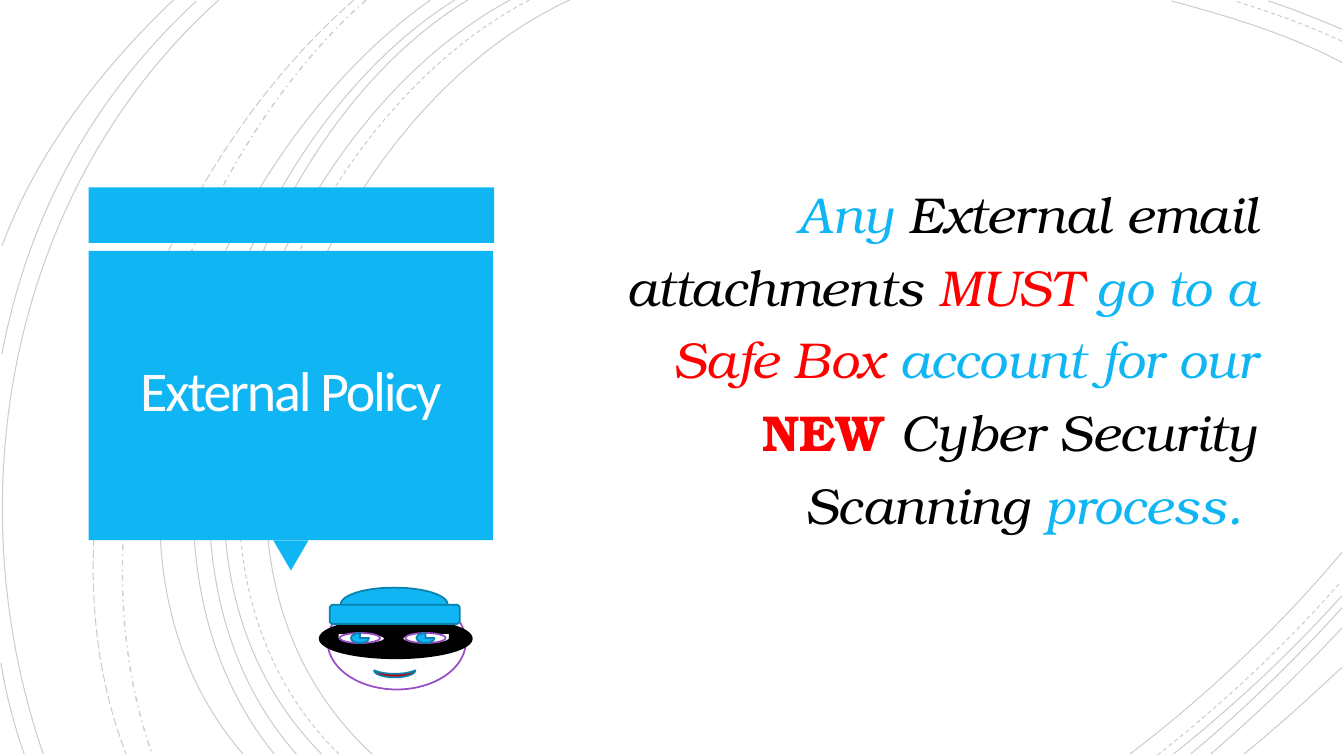
from lxml.etree import SubElement
from pptx import Presentation
from pptx.dml.color import RGBColor
from pptx.enum.dml import MSO_LINE
from pptx.enum.shapes import MSO_SHAPE
from pptx.enum.text import MSO_ANCHOR, MSO_AUTO_SIZE, PP_ALIGN
from pptx.oxml.ns import qn
from pptx.util import Pt

PX = 9144  # one px is a hundredth of an inch

BLUE = RGBColor(0x10, 0xB6, 0xF4)
DARK_BLUE = RGBColor(0x0B, 0x81, 0xAD)
PURPLE = RGBColor(0x98, 0x4E, 0xC7)
RED = RGBColor(0xFF, 0x00, 0x00)
DARK_RED = RGBColor(0xC0, 0x00, 0x00)
BLACK = RGBColor(0x00, 0x00, 0x00)
WHITE = RGBColor(0xFF, 0xFF, 0xFF)
TITLE_WHITE = RGBColor(0xFF, 0xFE, 0xFF)

SOLID, DASH = MSO_LINE.SOLID, MSO_LINE.DASH

# Each arc: start, two control points, end, dash style
ARCS = [
    ((565, 0), (315, 115), (143, 540), (369, 748), SOLID),
    ((1331, 62), (1278, 34), (1218, 16), (1162, 1), SOLID),
    ((1121, 748), (1197, 690), (1269, 622), (1331, 548), SOLID),
    ((525, 0), (285, 125), (123, 537), (336, 748), DASH),
    ((1331, 41), (1297, 25), (1260, 12), (1225, 1), DASH),
    ((1148, 749), (1213, 698), (1275, 640), (1330, 577), DASH),
    ((506, 0), (270, 127), (110, 537), (319, 748), SOLID),
    ((1331, 29), (1307, 19), (1283, 9), (1258, 1), SOLID),
    ((1164, 748), (1223, 701), (1280, 648), (1331, 591), SOLID),
    ((464, 0), (244, 133), (110, 541), (294, 748), SOLID),
    ((1181, 748), (1234, 704), (1284, 655), (1331, 603), SOLID),
    ((451, 0), (231, 138), (97, 533), (272, 748), SOLID),
    ((1201, 748), (1246, 709), (1290, 667), (1331, 623), SOLID),
    ((427, 0), (217, 147), (53, 529), (241, 748), SOLID),
    ((1234, 748), (1267, 721), (1299, 692), (1331, 662), SOLID),
    ((363, 0), (176, 166), (65, 509), (151, 748), MSO_LINE.DASH_DOT),
    ((351, 0), (157, 169), (29, 499), (125, 748), MSO_LINE.LONG_DASH),
    ((217, 0), (11, 185), (-46, 490), (43, 748), SOLID),
    ((195, 1), (92, 96), (28, 214), (2, 351), SOLID),
    ((1, 658), (6, 689), (14, 719), (24, 748), SOLID),
    ((172, 0), (100, 69), (37, 150), (2, 244), SOLID),
]

POLICY_RUNS = [
    ("Any ", BLUE), ("External email attachments ", BLACK), ("MUST", RED),
    (" go to a ", BLUE), ("Safe Box ", RED), ("account for our ", BLUE),
    ("NEW ", RED), ("Cyber Security Scanning ", BLACK), ("process. ", BLUE),
]


def apply_format(target, values):
    for name, value in values.items():
        setattr(target, name, value)


class SlideBuilder:
    """Holds the slide and its style, and adds one kind of element per method."""

    title_font = {"name": "Calibri", "size": Pt(40), "bold": False}
    body_font = {"name": "TeX Gyre Bonum", "size": Pt(36)}

    def __init__(self, presentation):
        self.slide = presentation.slides.add_slide(presentation.slide_layouts[1])
        self.shapes = self.slide.shapes

    def arc(self, *points, dash):
        builder = self.shapes.build_freeform(*points[0], scale=PX)
        builder.add_line_segments(points[1:], close=False)
        shape = builder.convert_to_shape()
        # Join the three segments into one Bézier curve
        segments = shape._element.spPr.findall(".//" + qn("a:lnTo"))
        outline = segments[0].getparent()
        curve = SubElement(outline, qn("a:cubicBezTo"))
        for segment in segments:
            curve.append(segment[0])
            outline.remove(segment)
        shape.shadow.inherit = False
        shape.fill.background()
        shape.line.color.rgb = BLACK
        width = Pt(1) if dash == MSO_LINE.DASH_DOT else Pt(0.75)
        apply_format(shape.line, {"width": width, "dash_style": dash})
        color = shape._element.spPr.find(".//" + qn("a:srgbClr"))
        SubElement(color, qn("a:alpha"), val="20000")

    def shape(self, kind, box, fill, line=None, rotation=0, flip=False):
        shape = self.shapes.add_shape(kind, *(value * PX for value in box))
        shape.shadow.inherit = False
        shape.rotation = rotation
        shape.fill.solid()
        shape.fill.fore_color.rgb = fill
        if line is None:
            shape.line.fill.background()
        else:
            shape.line.color.rgb = line
            shape.line.width = Pt(1.25)
        if flip:
            shape._element.spPr.find(qn("a:xfrm")).set("flipH", "1")

    def placeholder(self, index, box, margins, paragraph_format):
        placeholder = self.slide.placeholders[index]
        self.shapes._spTree.append(placeholder._element)  # bring to front
        names = ("left", "top", "width", "height")
        apply_format(placeholder, {n: v * PX for n, v in zip(names, box)})
        frame = placeholder.text_frame
        apply_format(frame, {
            "word_wrap": True, "auto_size": MSO_AUTO_SIZE.NONE,
            "vertical_anchor": MSO_ANCHOR.MIDDLE})
        names = ("margin_left", "margin_top", "margin_right", "margin_bottom")
        apply_format(frame, {n: v * PX for n, v in zip(names, margins)})
        paragraph = frame.paragraphs[0]
        apply_format(paragraph, paragraph_format)
        return paragraph

    def title(self, text, box):
        paragraph = self.placeholder(0, box, (25, 25, 25, 25), {
            "alignment": PP_ALIGN.CENTER, "line_spacing": 0.85})
        run = paragraph.add_run()
        run.text = text
        apply_format(run.font, self.title_font)
        run.font.color.rgb = TITLE_WHITE
        run._r.get_or_add_rPr().set("spc", "-150")

    def body(self, runs, box):
        paragraph = self.placeholder(1, box, (10, 5, 10, 55), {
            "alignment": PP_ALIGN.RIGHT, "line_spacing": 1.2,
            "space_before": Pt(10)})
        properties = paragraph._p.get_or_add_pPr()
        properties.set("marL", "0")
        properties.set("indent", "0")
        SubElement(properties, qn("a:buNone"))
        for text, color in runs:
            run = paragraph.add_run()
            run.text = text
            strong = text == "NEW "
            apply_format(run.font, {**self.body_font, "bold": strong, "italic": not strong})
            run.font.color.rgb = color


def main():
    presentation = Presentation()
    apply_format(presentation, {"slide_width": 1333 * PX, "slide_height": 750 * PX})
    builder = SlideBuilder(presentation)

    # Background arcs
    for *points, dash in ARCS:
        builder.arc(*points, dash=dash)

    # Title panel with its pointer
    builder.shape(MSO_SHAPE.RECTANGLE, (88, 186, 402, 55), BLUE)
    builder.shape(MSO_SHAPE.ISOSCELES_TRIANGLE, (271, 536, 35, 30), BLUE, rotation=180)
    builder.shape(MSO_SHAPE.RECTANGLE, (88, 249, 401, 287), BLUE)

    # Title and policy text
    builder.title("External Policy", (97, 257, 383, 269))
    builder.body(POLICY_RUNS, (545, 151, 712, 448))

    # Masked face: head, mask and eye holes
    builder.shape(MSO_SHAPE.OVAL, (325, 589, 137, 95), WHITE, PURPLE)
    builder.shape(MSO_SHAPE.OVAL, (317, 614, 151, 39), BLACK, BLACK)
    for left, flip in ((399, False), (335, True)):
        builder.shape(MSO_SHAPE.TEAR, (left, 628, 47, 11), WHITE, BLACK, flip=flip)

    # Hat and mouth
    builder.shape(MSO_SHAPE.OVAL, (338, 583, 106, 33), BLUE, DARK_BLUE)
    builder.shape(MSO_SHAPE.ROUNDED_RECTANGLE, (327, 600, 129, 19), BLUE, DARK_BLUE)
    builder.shape(MSO_SHAPE.MOON, (388, 648, 7, 41), DARK_RED, DARK_BLUE, rotation=270)

    # Eyes
    for left in (337, 402):
        builder.shape(MSO_SHAPE.OVAL, (left, 628, 40, 10), WHITE, PURPLE)
        builder.shape(MSO_SHAPE.PIE, (left + 11, 628, 18, 10), BLUE, DARK_BLUE)

    presentation.save("out.pptx")


if __name__ == "__main__":
    main()
